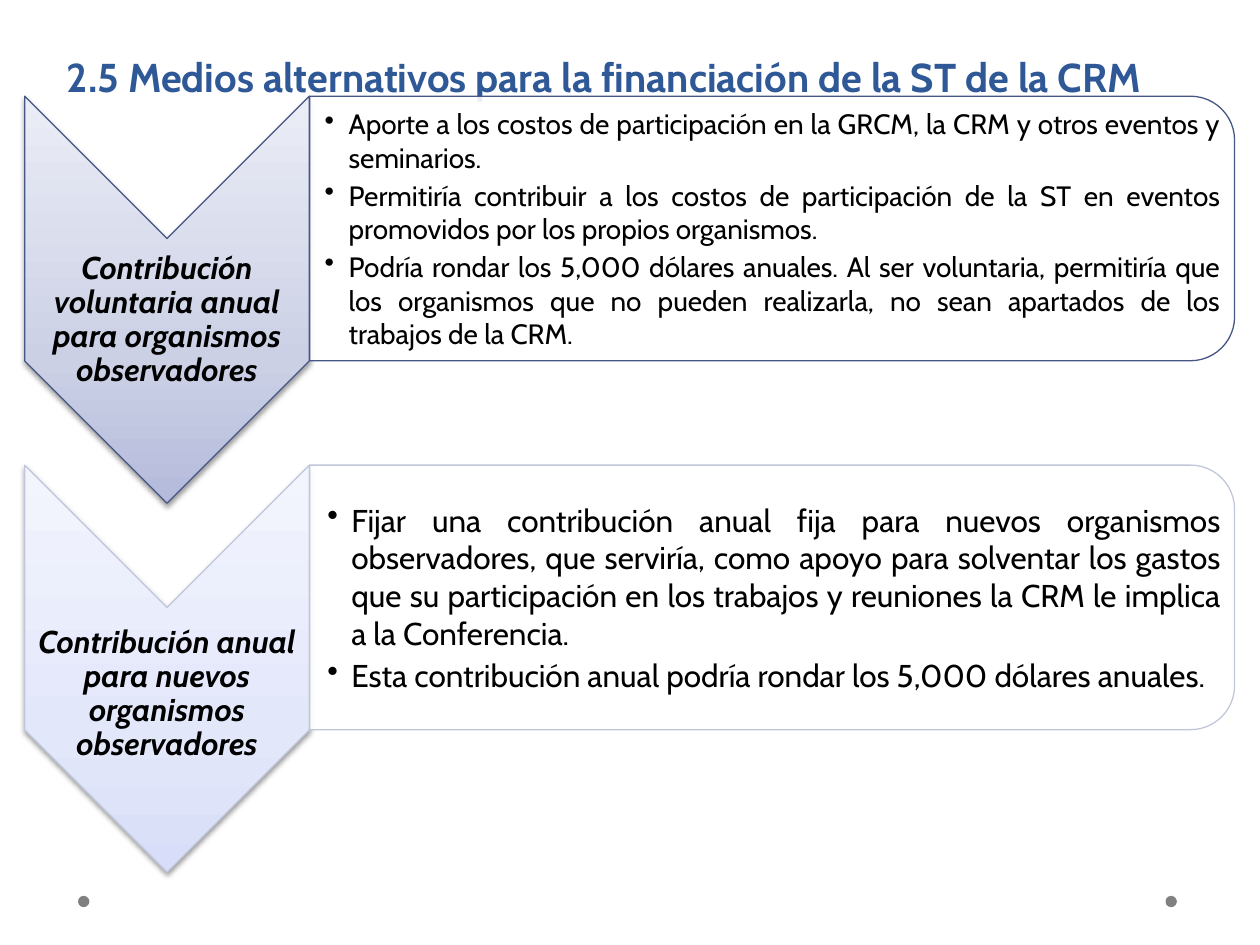
from lxml.etree import SubElement
from pptx import Presentation
from pptx.dml.color import RGBColor
from pptx.enum.shapes import MSO_SHAPE as SHAPE
from pptx.enum.text import MSO_ANCHOR as ANCHOR, PP_ALIGN as ALIGN
from pptx.oxml import parse_xml
from pptx.oxml.ns import nsdecls, qn
from pptx.util import Pt

TITLE = "2.5 Medios alternativos para la financiación de la ST de la CRM"
BLOCKS = [
    {"label": "Contribución voluntaria anual para organismos observadores",
     "label_center": 128, "size": 16, "inset": 8.6, "line": "475785",
     "stops": [(0, "B4BBDB"), (35, "CBD0E5"), (100, "EBEDF6")],
     "bullets": [
         "Aporte a los costos de participación en la GRCM, la CRM y otros eventos y seminarios.",
         "Permitiría contribuir a los costos de participación de la ST en eventos promovidos "
         "por los propios organismos.",
         "Podría rondar los 5,000 dólares anuales. Al ser voluntaria, permitiría que los "
         "organismos que no pueden realizarla, no sean apartados de los trabajos de la CRM."]},
    {"label": "Contribución anual para nuevos organismos observadores",
     "label_center": 131, "size": 18, "inset": 10.1, "line": "C1C7DB",
     "stops": [(0, "D8DEF9"), (35, "E3E7FA"), (100, "F3F5FE")],
     "bullets": [
         "Fijar una contribución anual fija para nuevos organismos observadores, que serviría, "
         "como apoyo para solventar los gastos que su participación en los trabajos y reuniones "
         "la CRM le implica a la Conferencia.",
         "Esta contribución anual podría rondar los 5,000 dólares anuales."]},
]
TOP, PITCH = 55, 210.8
CHEVRON_X, CHEVRON_W, CHEVRON_H = 14.1, 162.7, 232.6
PANEL_X, PANEL_W, PANEL_H = 177, 528.5, 151.2
LABEL_H, BODY_W, BODY_H = 70, 521.3, 136.8
DOTS_X, DOT_Y, DOT = (44.6, 666), 511.9, 6.5


def color(hex_text):
    return RGBColor.from_string(hex_text)


def set_all(target, **values):
    for name, value in values.items():
        setattr(target, name, value)


def add_turned(kind, x, y, w, h, line):
    """Add a shape turned 90 degrees that covers the given upright box."""
    sp = s.shapes.add_shape(kind, Pt(x + (w - h) / 2), Pt(y + (h - w) / 2), Pt(h), Pt(w))
    sp.rotation = 90
    sp.shadow.inherit = False
    sp.line.color.rgb = color(line)
    sp.line.width = Pt(0.75)
    return sp


def add_gradient(sp, stops):
    """Fill upwards, keeping the direction when the shape is turned."""
    marks = "".join(f'<a:gs pos="{pos * 1000}"><a:srgbClr val="{c}"/></a:gs>' for pos, c in stops)
    sp._element.spPr.find(qn("a:prstGeom")).addnext(parse_xml(
        f'<a:gradFill {nsdecls("a")} rotWithShape="0"><a:gsLst>{marks}</a:gsLst>'
        '<a:lin ang="16200000" scaled="0"/></a:gradFill>'))


def add_shadow(sp):
    effects = sp._element.spPr.find(qn("a:effectLst"))
    effects.append(parse_xml(
        f'<a:outerShdw {nsdecls("a")} blurRad="{Pt(3.1)}" dist="{Pt(1.6)}" dir="5400000" '
        'rotWithShape="0"><a:srgbClr val="000000"><a:alpha val="38000"/></a:srgbClr></a:outerShdw>'))


def add_text(x, y, w, h, texts, inset, font, bulleted=False, **paragraph):
    tf = s.shapes.add_textbox(Pt(x), Pt(y), Pt(w), Pt(h)).text_frame
    set_all(tf, word_wrap=True, vertical_anchor=ANCHOR.MIDDLE, margin_left=Pt(inset),
            margin_right=Pt(0.7), margin_top=Pt(0.7), margin_bottom=Pt(0.7))
    for i, text in enumerate(texts):
        p = tf.add_paragraph() if i else tf.paragraphs[0]
        set_all(p, **paragraph)
        r = p.add_run()
        r.text = text
        set_all(r.font, name="Cabin", **font)
        r.font.color.rgb = color("000000")
        if bulleted:
            pPr = p._p.get_or_add_pPr()
            pPr.set("marL", str(Pt(13.7)))
            pPr.set("indent", str(Pt(-13.7)))
            SubElement(pPr, qn("a:buChar"), char="•")


prs = Presentation()
set_all(prs, slide_width=Pt(720), slide_height=Pt(540))
s = prs.slides.add_slide(prs.slide_layouts[5])

title = s.shapes.title
set_all(title, left=Pt(31), top=Pt(-64.8), width=Pt(648), height=Pt(126))
tf = title.text_frame
tf.text = TITLE
set_all(tf, vertical_anchor=ANCHOR.BOTTOM, word_wrap=True)
p = tf.paragraphs[0]
set_all(p, alignment=ALIGN.LEFT, line_spacing=Pt(58))
set_all(p.runs[0].font, name="Cabin", size=Pt(23), bold=True)
p.runs[0].font.color.rgb = color("2F5897")

for x in DOTS_X:
    dot = s.shapes.add_shape(SHAPE.OVAL, Pt(x), Pt(DOT_Y), Pt(DOT), Pt(DOT))
    dot.shadow.inherit = False
    dot.fill.solid()
    dot.fill.fore_color.rgb = color("808080")
    dot.line.fill.background()

for i, block in enumerate(BLOCKS):
    y = TOP + i * PITCH
    chevron = add_turned(SHAPE.CHEVRON, CHEVRON_X, y, CHEVRON_W, CHEVRON_H, block["line"])
    add_gradient(chevron, block["stops"])
    add_shadow(chevron)
    add_text(CHEVRON_X, y + block["label_center"] - LABEL_H / 2, CHEVRON_W, LABEL_H,
             [block["label"]], 0.7, {"size": Pt(18), "bold": True, "italic": True},
             alignment=ALIGN.CENTER, line_spacing=0.9)
    panel = add_turned(SHAPE.ROUND_2_SAME_RECTANGLE, PANEL_X, y, PANEL_W, PANEL_H, block["line"])
    panel.fill.solid()
    panel.fill.fore_color.rgb = color("FFFFFF")
    fill = panel._element.spPr.find(qn("a:solidFill"))
    SubElement(fill[0], qn("a:alpha"), val="90000")
    add_text(PANEL_X, y + (PANEL_H - BODY_H) / 2, BODY_W, BODY_H, block["bullets"],
             block["inset"], {"size": Pt(block["size"])}, bulleted=True,
             alignment=ALIGN.JUSTIFY, space_after=Pt(0.15 * block["size"]))

prs.save("out.pptx")
